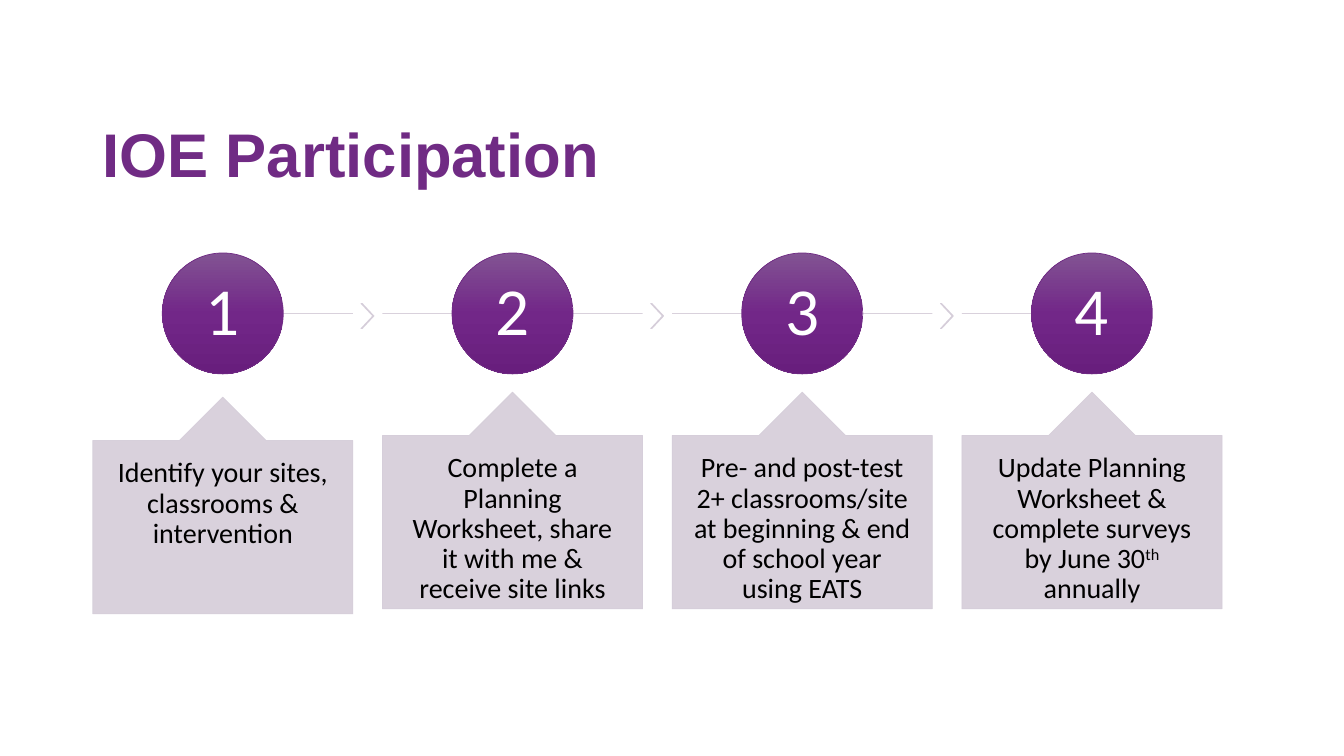
from lxml import etree
from pptx import Presentation
from pptx.dml.color import RGBColor
from pptx.enum.shapes import MSO_CONNECTOR, MSO_SHAPE
from pptx.enum.text import MSO_ANCHOR, PP_ALIGN
from pptx.oxml.ns import qn
from pptx.util import Inches, Pt

TITLE = "IOE Participation"
# Each step is a list of (text, is superscript) pieces.
STEPS = [
    [("Identify your sites, classrooms & intervention", False)],
    [("Complete a Planning Worksheet, share it with me & receive site links", False)],
    [("Pre- and post-test 2+ classrooms/site at beginning & end of school year using EATS", False)],
    [("Update Planning Worksheet & complete surveys by June 30", False),
     ("th ", True), ("annually", False)],
]
COLORS = {"purple": "702B84", "lavender": "D5CDD9", "white": "FFFFFF", "black": "000000"}
CIRCLE_GRADIENT = [(0, "825393"), (50, "722788"), (100, "681E7D")]

CENTER, TOP, MIDDLE = PP_ALIGN.CENTER, MSO_ANCHOR.TOP, MSO_ANCHOR.MIDDLE
LEFT, LAST_LEFT = 0.92, 9.54
PITCH = (LAST_LEFT - LEFT) / (len(STEPS) - 1)
CARD_W, CARD_H = 2.58, 2.15
FIRST_CARD_TOP, CARD_TOP = 3.94, 3.89
RAIL_Y = 3.11
CIRCLE = 1.2
CHEVRON_W, CHEVRON_H, CHEVRON_TOP, CHEVRON_GAP = 0.13, 0.25, 3.01, 0.08


def rgb(name):
    return RGBColor.from_string(COLORS[name])


def style_line(outlined, color):
    outlined.line.color.rgb = rgb(color)
    outlined.line.width = Pt(0.5)


def make_translucent(drawn):
    """Give every colour of the fill and outline 90 % opacity."""
    for color in list(drawn._element.spPr.iter(qn("a:srgbClr"))):
        etree.SubElement(color, qn("a:alpha"), val="90000")


def add_shape(kind, x, y, w, h):
    shape = slide.shapes.add_shape(kind, Inches(x), Inches(y), Inches(w), Inches(h))
    shape.shadow.inherit = False
    return shape


def add_lavender(kind, x, y, w, h, adjustments):
    shape = add_shape(kind, x, y, w, h)
    for i, value in enumerate(adjustments):
        shape.adjustments[i] = value
    shape.fill.solid()
    shape.fill.fore_color.rgb = rgb("lavender")
    style_line(shape, "lavender")
    make_translucent(shape)
    return shape


def fill_circle(circle):
    """Vertical gradient with three stops, light at the top."""
    circle.fill.gradient()
    circle.fill.gradient_angle = 270
    stops = circle._element.spPr.find(".//" + qn("a:gsLst"))
    for stop in list(stops):
        stops.remove(stop)
    for percent, color in CIRCLE_GRADIENT:
        stop = etree.SubElement(stops, qn("a:gs"), pos=str(percent * 1000))
        etree.SubElement(stop, qn("a:srgbClr"), val=color)


def write(shape, pieces, size, color, anchor, inset_x, inset_y):
    frame = shape.text_frame
    frame.word_wrap = True
    frame.vertical_anchor = anchor
    frame.margin_left = frame.margin_right = Inches(inset_x)
    frame.margin_top = frame.margin_bottom = Inches(inset_y)
    paragraph = frame.paragraphs[0]
    paragraph.alignment = CENTER
    paragraph.line_spacing = 0.9
    paragraph.font.size = Pt(size)
    paragraph.font.name = "Calibri"
    paragraph.font.color.rgb = rgb(color)
    for text, superscript in pieces:
        run = paragraph.add_run()
        run.text = text
        if superscript:
            run._r.get_or_add_rPr().set("baseline", "30000")


def add_rail(start, end):
    rail = slide.shapes.add_connector(
        MSO_CONNECTOR.STRAIGHT, Inches(start), Inches(RAIL_Y), Inches(end), Inches(RAIL_Y))
    style_line(rail, "lavender")
    make_translucent(rail)
    etree.SubElement(rail._element.spPr, qn("a:effectLst"))


def add_step(index, pieces):
    left = LEFT + index * PITCH
    right, center = left + CARD_W, left + CARD_W / 2
    first, last = index == 0, index == len(STEPS) - 1

    add_rail(center if first else left, center if last else right)
    if not last:
        add_lavender(MSO_SHAPE.CHEVRON, right + CHEVRON_GAP, CHEVRON_TOP,
                     CHEVRON_W, CHEVRON_H, [0.9])

    circle = add_shape(MSO_SHAPE.OVAL, center - CIRCLE / 2, RAIL_Y - CIRCLE / 2, CIRCLE, CIRCLE)
    fill_circle(circle)
    style_line(circle, "purple")
    write(circle, [(str(index + 1), False)], 48, "white", MIDDLE, 0.05, 0.05)

    card = add_lavender(MSO_SHAPE.UP_ARROW_CALLOUT, left, FIRST_CARD_TOP if first else CARD_TOP,
                        CARD_W, CARD_H, [0.5, 0.2, 0.2, 1])
    write(card, pieces, 20, "black", TOP, 0.2, 0.18)


prs = Presentation()
prs.slide_width, prs.slide_height = Inches(13.33), Inches(7.5)
slide = prs.slides.add_slide(prs.slide_layouts[5])

title = slide.shapes.title
title.left, title.top, title.width, title.height = map(Inches, (0.92, 0.84, 11.5, 1.45))
title.text_frame.text = TITLE
title.text_frame.vertical_anchor = MIDDLE
heading = title.text_frame.paragraphs[0]
heading.alignment = PP_ALIGN.LEFT
heading.line_spacing = 0.9
heading.font.size = Pt(44)
heading.font.name = "Arial"
heading.font.bold = True
heading.font.color.rgb = rgb("purple")

for index, pieces in enumerate(STEPS):
    add_step(index, pieces)

prs.save("out.pptx")
